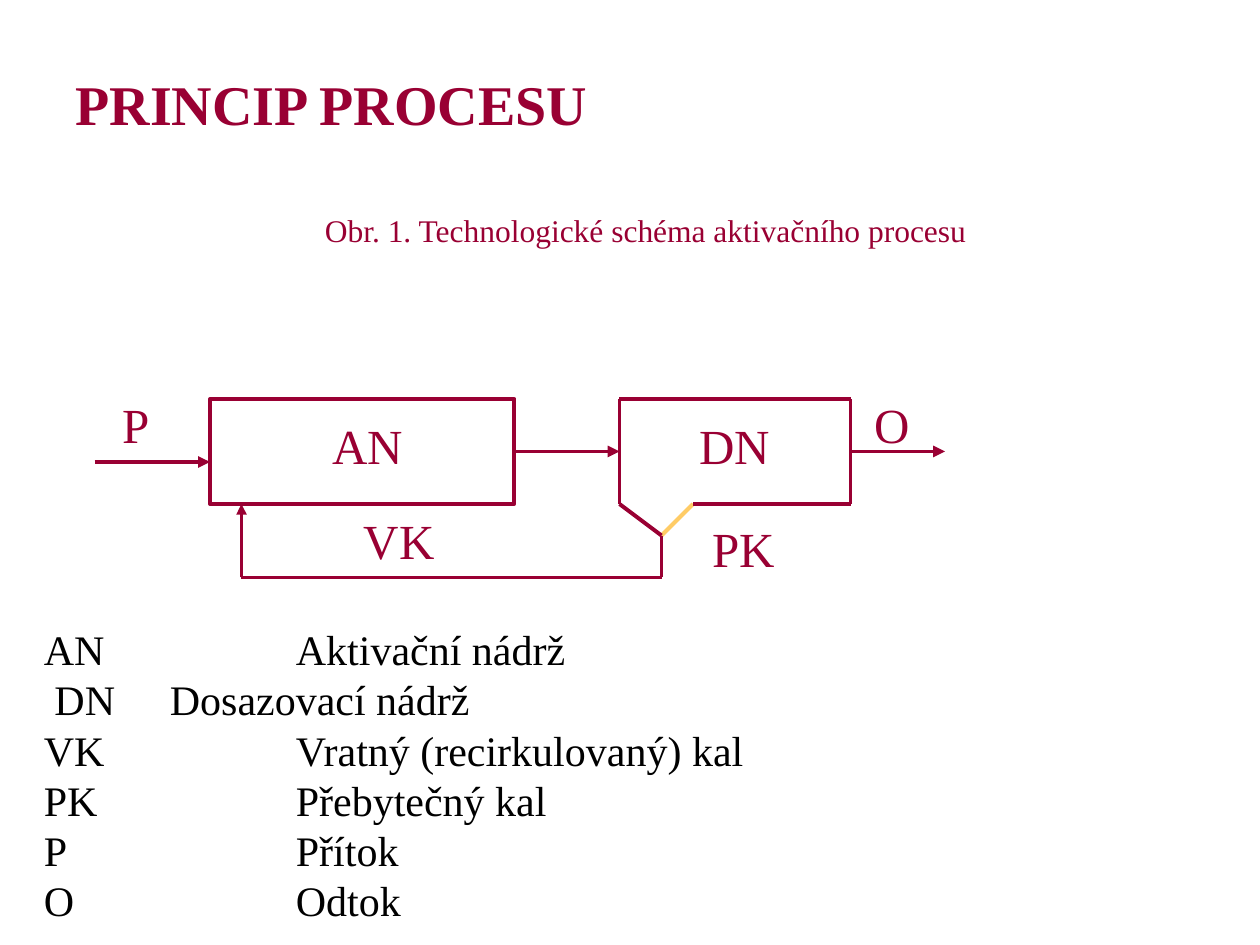
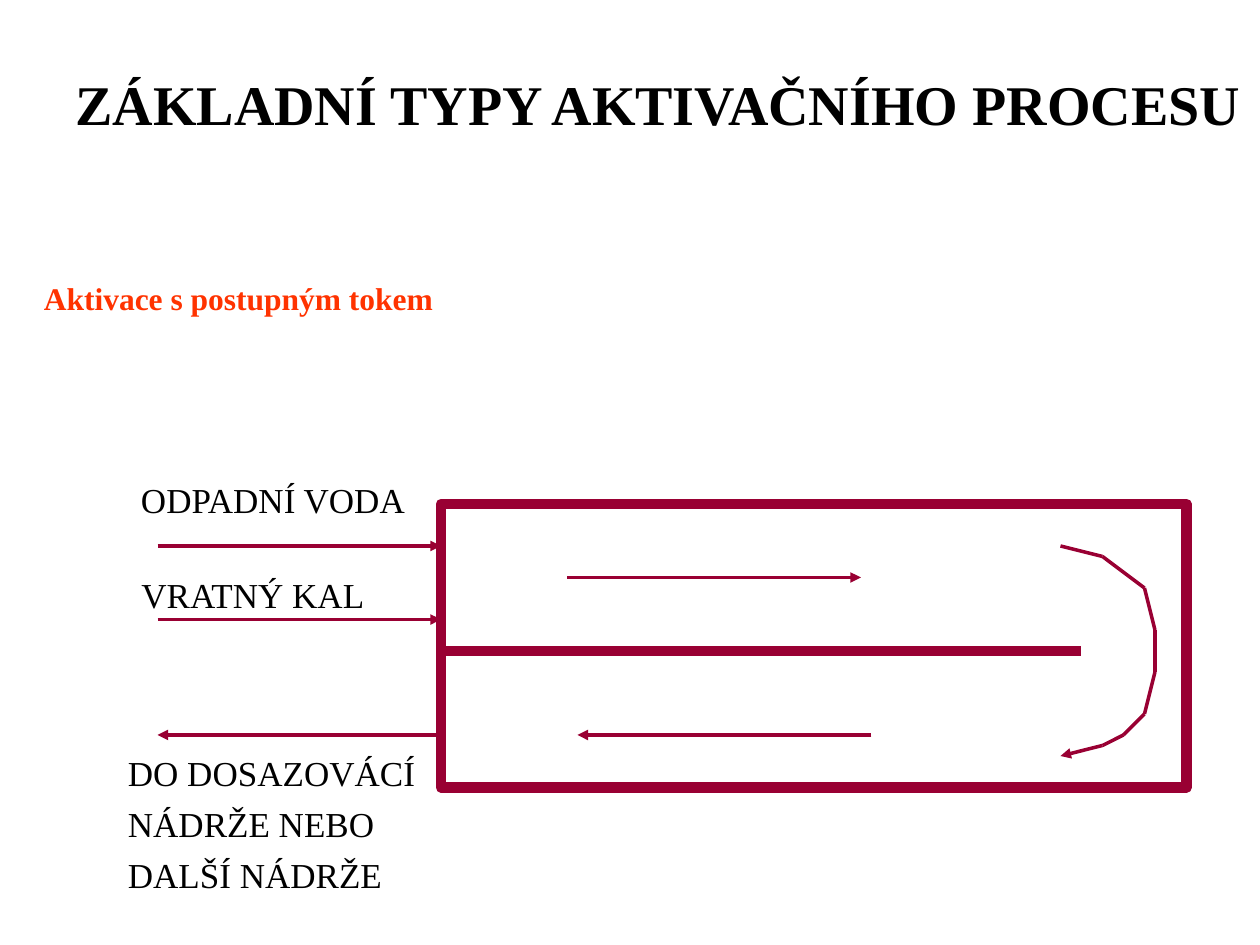
from lxml import etree
from pptx import Presentation
from pptx.dml.color import RGBColor
from pptx.enum.shapes import MSO_CONNECTOR, MSO_SHAPE
from pptx.enum.text import PP_ALIGN
from pptx.oxml.ns import qn
from pptx.util import Pt

STRAIGHT = MSO_CONNECTOR.STRAIGHT
RECTANGLE = MSO_SHAPE.RECTANGLE
LEFT, CENTER = PP_ALIGN.LEFT, PP_ALIGN.CENTER

MAROON, GOLD, RED, BLACK = "990033", "FFCC66", "FF3300", "000000"
FONT = "Times New Roman"
THIN, MEDIUM, THICK = 2, 2.25, 6

TITLE = {"size": 32, "bold": True}
CAPTION = {"size": 18, "color": MAROON, "align": CENTER}
SUBTITLE = {"size": 18, "color": RED, "bold": True}
SYMBOL = {"size": 28, "color": MAROON, "align": CENTER}
FLOW_LABEL = {"size": 20, "align": CENTER}
OUTLET_LABEL = {"size": 20, "space_before": 5}
LEGEND = {"size": 24, "line_spacing": 0.8, "space_before": 5.6, "tab": 144}

PROCESS = {
    "texts": [
        (["PRINCIP PROCESU"], (36, 36, 608, 47), {**TITLE, "color": MAROON}),
        (["Obr. 1. Technologické schéma aktivačního procesu"], (18, 117, 702, 30), CAPTION),
        (["P"], (54, 222, 48, 41), SYMBOL),
        (["AN"], (168, 234, 84, 41), SYMBOL),
        (["DN"], (378, 234, 84, 41), SYMBOL),
        (["O"], (468, 222, 84, 41), SYMBOL),
        (["VK"], (186, 288, 84, 41), SYMBOL),
        (["PK"], (383, 292.5, 84, 41), SYMBOL),
        (["AN\tAktivační nádrž", "DN\tDosazovací nádrž", "VK\tVratný (recirkulovaný) kal",
          "PK\tPřebytečný kal", "P\tPřítok", "O\tOdtok"],
         (18, 358.5, 677, 181), {**LEGEND, "indents": {1: 6}}),
    ],
    "tanks": [((120, 228, 174, 60), MEDIUM)],
    "paths": [
        ([(54, 264), (120, 264)], MAROON, MEDIUM, True),
        ([(294, 258), (354, 258)], MAROON, MEDIUM, True),
        ([(486, 258), (540, 258)], MAROON, MEDIUM, True),
        ([(378, 306), (396, 288)], GOLD, MEDIUM, False),
        ([(396, 288), (486, 288), (486, 228), (354, 228), (354, 288), (378, 306), (378, 330)],
         MAROON, MEDIUM, False),
        ([(378, 330), (138, 330), (138, 288)], MAROON, THIN, True),
    ],
}

PLUG_FLOW = {
    "texts": [
        (["ZÁKLADNÍ TYPY AKTIVAČNÍHO PROCESU"], (36, 36, 684, 90), TITLE),
        (["Aktivace s postupným tokem"], (18, 156, 678, 30), SUBTITLE),
        (["ODPADNÍ VODA"], (72, 270, 168, 31), FLOW_LABEL),
        (["VRATNÝ KAL"], (72, 324, 145, 31), FLOW_LABEL),
        (["DO DOSAZOVÁCÍ", "NÁDRŽE NEBO", "DALŠÍ NÁDRŽE"], (66, 426, 184, 88), OUTLET_LABEL),
    ],
    "tanks": [((252, 288, 426, 162), THICK)],
    "paths": [
        ([(252, 372), (618, 372)], MAROON, THICK, False),
        ([(324, 330), (492, 330)], MAROON, THIN, True),
        ([(498, 420), (330, 420)], MAROON, THIN, True),
        ([(606, 312), (630, 318), (654, 336), (660, 360), (660, 384), (654, 408),
          (642, 420), (630, 426), (606, 432)], MAROON, THIN, True),
        ([(90, 312), (252, 312)], MAROON, THIN, True),
        ([(90, 354), (252, 354)], MAROON, THIN, True),
        ([(252, 420), (90, 420)], MAROON, THIN, True),
    ],
}


def rgb(color):
    return RGBColor.from_string(color)


def add_text(slide, lines, box, style):
    frame = slide.shapes.add_textbox(*map(Pt, box)).text_frame
    frame.word_wrap = True
    for index, line in enumerate(lines):
        paragraph = frame.add_paragraph() if index else frame.paragraphs[0]
        paragraph.text = line
        properties = paragraph._p.get_or_add_pPr()
        if index in style.get("indents", {}):
            properties.set("indent", str(Pt(style["indents"][index])))
        layout = {"alignment": style.get("align", LEFT),
                  "line_spacing": style.get("line_spacing", 1.0),
                  "space_before": Pt(style.get("space_before", 0) if index else 0)}
        for name, value in layout.items():
            setattr(paragraph, name, value)
        if "tab" in style:
            tabs = etree.SubElement(properties, qn("a:tabLst"))
            etree.SubElement(tabs, qn("a:tab"), pos=str(Pt(style["tab"])), algn="l")
        font = paragraph.runs[0].font
        format_values = {"name": FONT, "size": Pt(style["size"]), "bold": style.get("bold", False)}
        for name, value in format_values.items():
            setattr(font, name, value)
        font.color.rgb = rgb(style.get("color", BLACK))


def set_line(line, color, width):
    line.color.rgb = rgb(color)
    line.width = Pt(width)


def add_tank(slide, box, width):
    shape = slide.shapes.add_shape(RECTANGLE, *map(Pt, box))
    shape.shadow.inherit = False
    shape.fill.background()
    set_line(shape.line, MAROON, width)


def add_path(slide, points, color, width, arrow):
    for start, end in zip(points, points[1:]):
        connector = slide.shapes.add_connector(STRAIGHT, *map(Pt, start + end))
        set_line(connector.line, color, width)
        properties = connector._element.spPr
        etree.SubElement(properties, qn("a:effectLst"))
        if arrow and end == points[-1]:
            etree.SubElement(properties.find(qn("a:ln")), qn("a:tailEnd"), type="triangle")


def main():
    """Build the two activated sludge slides."""
    presentation = Presentation()
    presentation.slide_width, presentation.slide_height = Pt(720), Pt(540)
    for content in (PROCESS, PLUG_FLOW):
        slide = presentation.slides.add_slide(presentation.slide_layouts[6])
        for tank in content["tanks"]:
            add_tank(slide, *tank)
        for path in content["paths"]:
            add_path(slide, *path)
        for text in content["texts"]:
            add_text(slide, *text)
    presentation.save("out.pptx")


if __name__ == "__main__":
    main()
